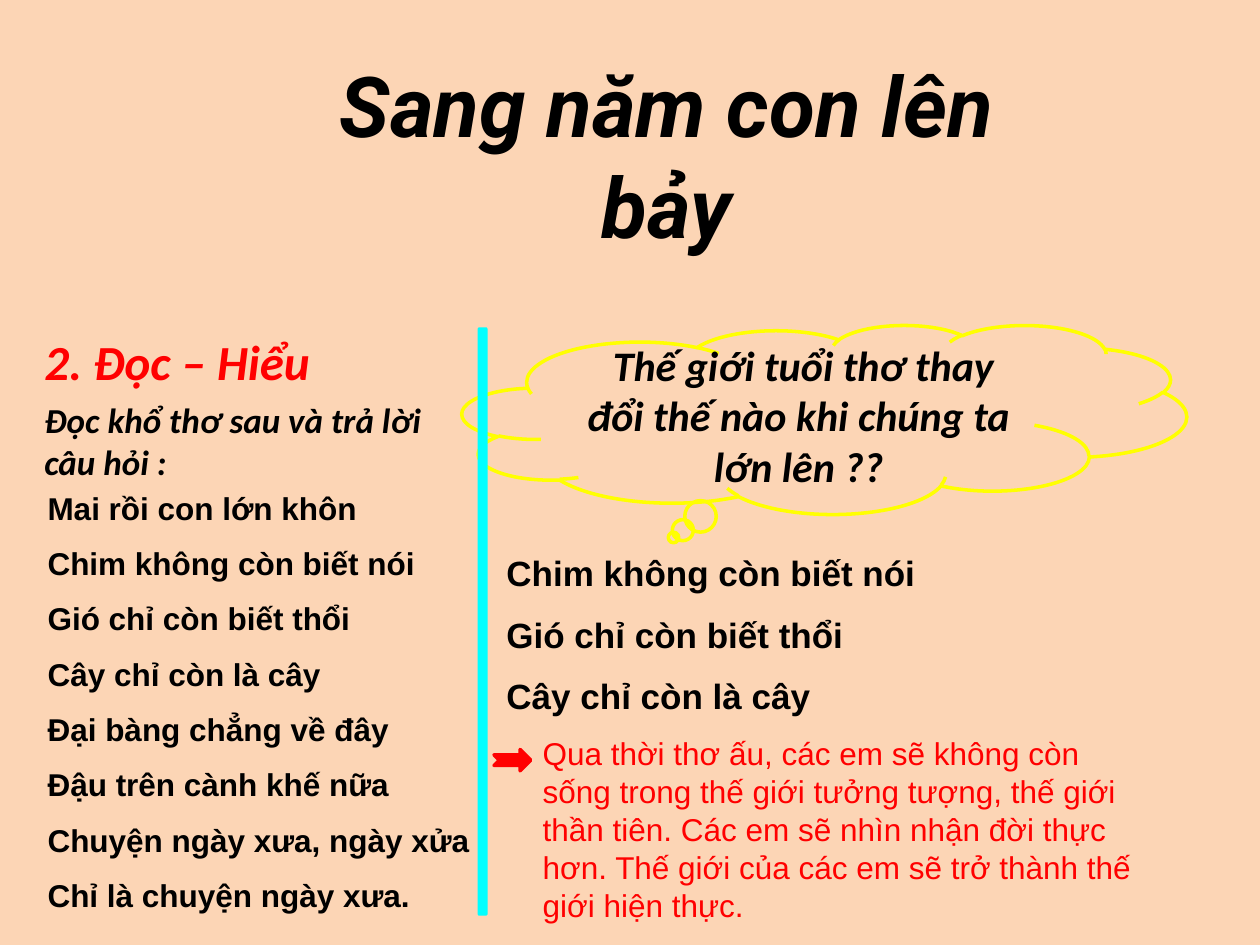
from dataclasses import dataclass

from pptx import Presentation
from pptx.dml.color import RGBColor
from pptx.enum.shapes import MSO_SHAPE as Preset
from pptx.enum.text import MSO_ANCHOR as Anchor, MSO_AUTO_SIZE as AutoSize, PP_ALIGN as Align
from pptx.oxml.ns import qn
from pptx.util import Cm, Pt


@dataclass(frozen=True)
class Theme:
    background: str = "FCD5B5"
    ink: str = "000000"
    red: str = "FF0000"
    yellow: str = "FFFF00"
    cyan: str = "00FFFF"
    title_size: int = 48
    heading_size: int = 28
    question_size: int = 24
    quote_size: int = 20
    text_size: int = 18


theme = Theme()


def write(frame, text, size, font="Arial", color=theme.ink, bold=True, italic=False,
          align=Align.LEFT, before=0, append=False):
    """Write each line of text as one formatted paragraph."""
    frame.word_wrap = True
    frame.auto_size = AutoSize.NONE
    for index, line in enumerate(text.split("\n")):
        paragraph = frame.add_paragraph() if append or index else frame.paragraphs[0]
        paragraph.alignment = align
        paragraph.space_before = Pt(before)
        run = paragraph.add_run()
        run.text = line
        run.font.name, run.font.size = font, Pt(size)
        run.font.bold, run.font.italic = bold, italic
        run.font.color.rgb = RGBColor.from_string(color)


def add_preset(preset, box, fill=None, line=None):
    """Add a preset shape with an optional fill and 2 pt outline."""
    shape = slide.shapes.add_shape(preset, *map(Cm, box))
    shape.shadow.inherit = False
    if fill:
        shape.fill.solid()
        shape.fill.fore_color.rgb = RGBColor.from_string(fill)
    else:
        shape.fill.background()
    if line:
        shape.line.color.rgb = RGBColor.from_string(line)
        shape.line.width = Pt(2)
    else:
        shape.line.fill.background()
    return shape


presentation = Presentation()
presentation.slide_width, presentation.slide_height = Cm(25.4), Cm(19.05)
slide = presentation.slides.add_slide(presentation.slide_layouts[1])
slide.background.fill.solid()
slide.background.fill.fore_color.rgb = RGBColor.from_string(theme.background)

# Title and reading task
title, body = slide.placeholders
for placeholder, box in ((title, (5.92, 2.54, 15.04, 2.74)), (body, (0.64, 6.55, 9, 11.86))):
    placeholder.left, placeholder.top, placeholder.width, placeholder.height = map(Cm, box)
title.text_frame.vertical_anchor = Anchor.BOTTOM
write(title.text_frame, "Sang năm con lên bảy", theme.title_size, font="Roboto",
      italic=True, align=Align.CENTER)
write(body.text_frame, "2. Đọc – Hiểu", theme.heading_size, font="Calibri",
      color=theme.red, italic=True)
write(body.text_frame, "Đọc khổ thơ sau và trả lời câu hỏi :", theme.quote_size,
      font="Calibri", italic=True, before=5, append=True)
for paragraph in body.text_frame.paragraphs:
    properties = paragraph._p.get_or_add_pPr()
    properties.set("marL", "0")
    properties.set("indent", "0")
    properties.append(properties.makeelement(qn("a:buNone"), {}))

# Poem
poem = slide.shapes.add_textbox(Cm(0.71), Cm(9.73), Cm(9.42), Cm(9.09))
write(poem.text_frame, """Mai rồi con lớn khôn
Chim không còn biết nói
Gió chỉ còn biết thổi
Cây chỉ còn là cây
Đại bàng chẳng về đây
Đậu trên cành khế nữa
Chuyện ngày xưa, ngày xửa
Chỉ là chuyện ngày xưa.""", theme.text_size, before=10)

# Question in a thought cloud
cloud = add_preset(Preset.CLOUD_CALLOUT, (9.32, 6.55, 14.6, 3.81), line=theme.yellow)
cloud.text_frame.vertical_anchor = Anchor.MIDDLE
write(cloud.text_frame, " Thế giới tuổi thơ thay đổi thế nào khi chúng ta lớn lên ??",
      theme.question_size, font="Calibri", italic=True, align=Align.CENTER)

# Quoted lines
quote = slide.shapes.add_textbox(Cm(9.96), Cm(11), Cm(12.7), Cm(3.68))
write(quote.text_frame, "Chim không còn biết nói\nGió chỉ còn biết thổi\nCây chỉ còn là cây",
      theme.quote_size, before=11)

# Conclusion with its arrow
add_preset(Preset.NOTCHED_RIGHT_ARROW, (9.96, 15.11, 0.74, 0.43), fill=theme.red, line=theme.red)
conclusion = slide.shapes.add_textbox(Cm(10.69), Cm(14.68), Cm(12.7), Cm(4.11))
write(conclusion.text_frame,
      "Qua thời thơ ấu, các em sẽ không còn sống trong thế giới tưởng tượng, "
      "thế giới thần tiên. Các em sẽ nhìn nhận đời thực hơn. "
      "Thế giới của các em sẽ trở thành thế giới hiện thực.",
      theme.text_size, color=theme.red, bold=False)

# Divider between the columns
add_preset(Preset.ROUNDED_RECTANGLE, (9.63, 6.6, 0.2, 11.86), fill=theme.cyan)

presentation.save("out.pptx")
